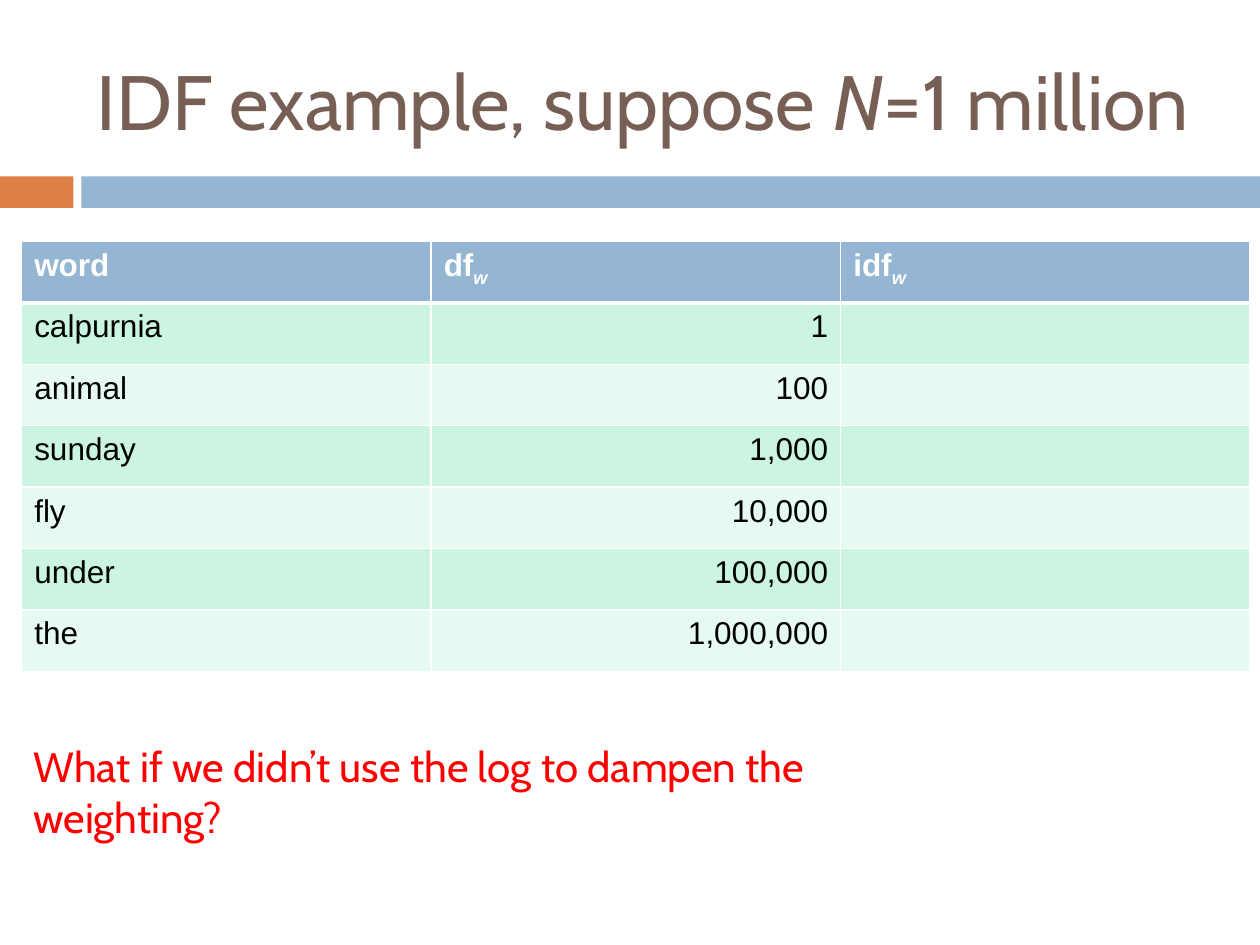
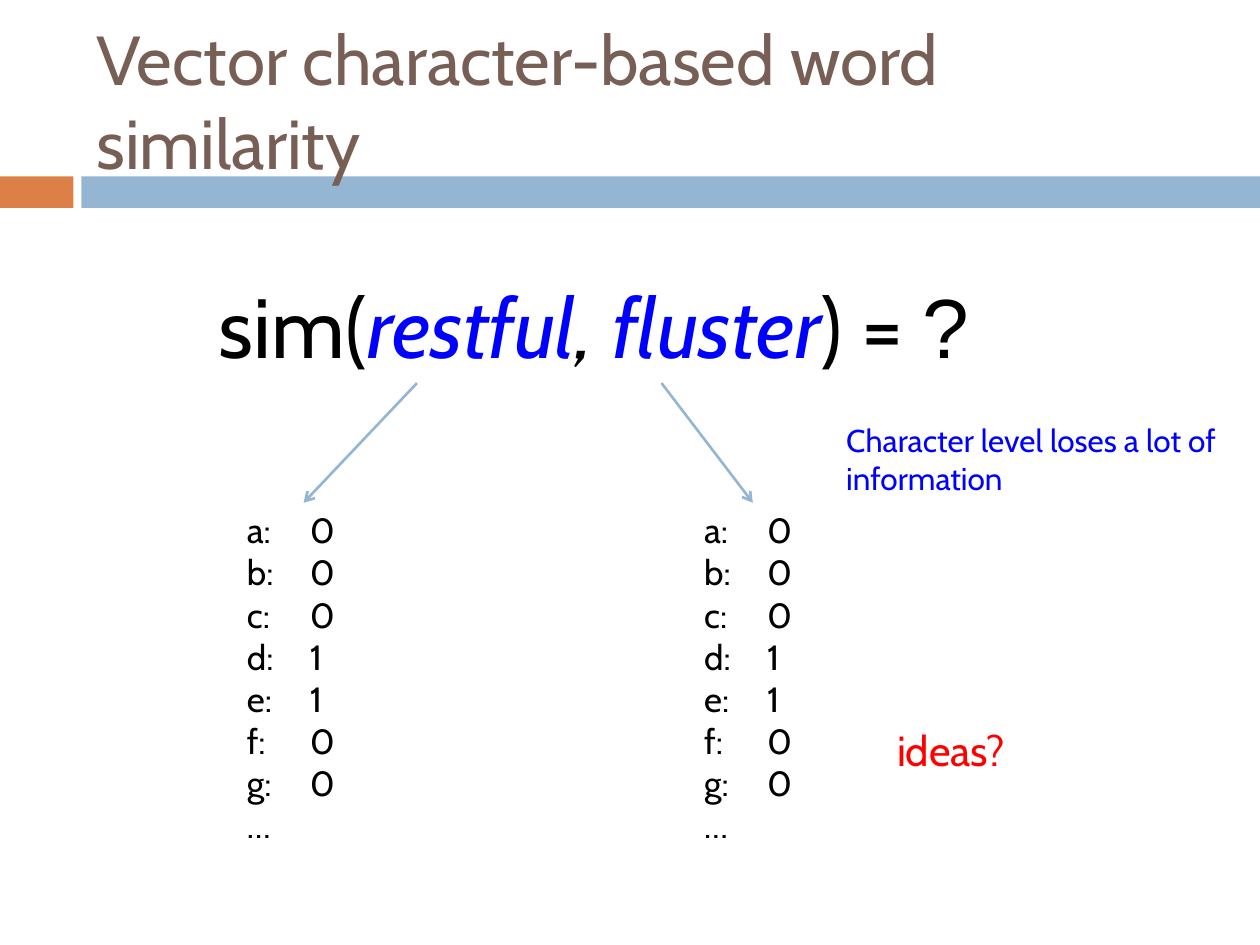
from lxml.etree import SubElement
from pptx import Presentation
from pptx.dml.color import RGBColor
from pptx.enum.shapes import MSO_CONNECTOR, MSO_SHAPE
from pptx.enum.text import MSO_ANCHOR, MSO_AUTO_SIZE, PP_ALIGN
from pptx.oxml.ns import qn
from pptx.util import Pt

BROWN = RGBColor(0x77, 0x5F, 0x55)
ORANGE = RGBColor(0xDD, 0x80, 0x47)
STEEL = RGBColor(0x94, 0xB6, 0xD2)
MINT = RGBColor(0xCB, 0xF5, 0xE1)
PALE_MINT = RGBColor(0xE7, 0xFA, 0xF1)
RED = RGBColor(0xFF, 0x00, 0x00)
BLUE = RGBColor(0x00, 0x00, 0xFF)
BLACK = RGBColor(0x00, 0x00, 0x00)
WHITE = RGBColor(0xFF, 0xFF, 0xFF)


def add_run(paragraph, text, size, color, font="Cabin", bold=False, italic=False):
    run = paragraph.add_run()
    run.text = text
    run.font.name = font
    run.font.size = Pt(size)
    run.font.color.rgb = color
    run.font.bold = bold
    run.font.italic = italic
    return run


def add_text_box(slide, left, top, width, height):
    """Add a wrapping text box and return its text frame."""
    frame = slide.shapes.add_textbox(Pt(left), Pt(top), Pt(width), Pt(height)).text_frame
    frame.word_wrap = True
    return frame


presentation = Presentation()
presentation.slide_width = Pt(720)
presentation.slide_height = Pt(540)
layout = presentation.slide_layouts[5]

# Titles: (text, italic) runs and size
titles = [
    ([("IDF example, suppose ", False), ("N", True), ("=1 million", False)], 44),
    ([("Vector character-based word similarity", False)], 39.6),
]
for title_runs, size in titles:
    slide = presentation.slides.add_slide(layout)
    title = slide.shapes.title
    title.left, title.top, title.width, title.height = Pt(48), Pt(18), Pt(642), Pt(78)
    title.text_frame.auto_size = MSO_AUTO_SIZE.NONE
    title.text_frame.vertical_anchor = MSO_ANCHOR.MIDDLE
    paragraph = title.text_frame.paragraphs[0]
    paragraph.alignment = PP_ALIGN.LEFT
    for text, italic in title_runs:
        add_run(paragraph, text, size, BROWN, italic=italic)
idf_slide, similarity_slide = presentation.slides

# The bands belong to the layout, behind every title
for left, width, color in [(0, 42, ORANGE), (46.5, 673.5, STEEL)]:
    band = idf_slide.shapes.add_shape(MSO_SHAPE.RECTANGLE, Pt(left), Pt(100.8), Pt(width), Pt(18))
    band.shadow.inherit = False
    band.fill.solid()
    band.fill.fore_color.rgb = color
    band.line.fill.background()
    layout.shapes.element.insert(2, band.element)

# Slide 1: document frequency table
frequencies = [
    ("calpurnia", "1"),
    ("animal", "100"),
    ("sunday", "1,000"),
    ("fly", "10,000"),
    ("under", "100,000"),
    ("the", "1,000,000"),
]
row_count = len(frequencies) + 1
row_height = 35.1
table = idf_slide.shapes.add_table(
    row_count, 3, Pt(12.4), Pt(138), Pt(702), Pt(row_count * row_height)
).table
for row in table.rows:
    row.height = Pt(row_height)

for row_index in range(row_count):
    for column_index in range(3):
        cell = table.cell(row_index, column_index)
        properties = cell._tc.get_or_add_tcPr()
        for side in ("L", "R", "T", "B"):
            under_header = (row_index, side) in [(0, "B"), (1, "T")]
            border = SubElement(properties, qn(f"a:ln{side}"), w=str(Pt(3 if under_header else 1)))
            border_fill = SubElement(border, qn("a:solidFill"))
            SubElement(border_fill, qn("a:srgbClr"), val=str(WHITE))
        cell.fill.solid()
        if row_index == 0:
            cell.fill.fore_color.rgb = STEEL
        else:
            cell.fill.fore_color.rgb = MINT if row_index % 2 else PALE_MINT

for column_index, (heading, subscript) in enumerate([("word", ""), ("df", "w"), ("idf", "w")]):
    paragraph = table.cell(0, column_index).text_frame.paragraphs[0]
    add_run(paragraph, heading, 18, WHITE, "Arial", bold=True)
    if subscript:
        run = add_run(paragraph, subscript, 18, WHITE, "Arial", bold=True, italic=True)
        run._r.get_or_add_rPr().set("baseline", "-25000")

for row_index, (word, frequency) in enumerate(frequencies, start=1):
    add_run(table.cell(row_index, 0).text_frame.paragraphs[0], word, 18, BLACK, "Arial")
    paragraph = table.cell(row_index, 1).text_frame.paragraphs[0]
    paragraph.alignment = PP_ALIGN.RIGHT
    add_run(paragraph, frequency, 18, BLACK, "Arial")

# Slide 2: similarity formula
formula = add_text_box(similarity_slide, 118, 153.4, 602, 65.5).paragraphs[0]
for text, color, font, italic in [
    ("sim(", BLACK, "Cabin", False),
    ("restful", BLUE, "Cabin", True),
    (",", BLACK, "Cabin", True),
    (" fluster", BLUE, "Cabin", True),
    (") = ", BLACK, "Cabin", False),
    ("?", BLACK, "Arial", False),
]:
    add_run(formula, text, 48, color, font, italic=italic)

# Both words give the same letter counts
letter_counts = [*(f"{letter}:\t{int(letter in 'de')}" for letter in "abcdefg"), "…"]
for list_left, arrow_start, arrow_end in [(134, 238.3, 173.5), (395.3, 378, 430.2)]:
    frame = add_text_box(similarity_slide, list_left, 287.3, 70, 201)
    for index, text in enumerate(letter_counts):
        paragraph = frame.add_paragraph() if index else frame.paragraphs[0]
        tabs = SubElement(paragraph._p.get_or_add_pPr(), qn("a:tabLst"))
        SubElement(tabs, qn("a:tab"), pos=str(Pt(36)), algn="l")
        add_run(paragraph, text, 20, BLACK)

    arrow = similarity_slide.shapes.add_connector(
        MSO_CONNECTOR.STRAIGHT, Pt(arrow_start), Pt(218.9), Pt(arrow_end), Pt(287.3)
    )
    arrow.line.color.rgb = STEEL
    arrow.line.width = Pt(1.5)
    SubElement(arrow.line._get_or_add_ln(), qn("a:tailEnd"), type="arrow")
    SubElement(arrow._element.spPr, qn("a:effectLst"))

# Remarks on both slides
for slide, text, size, color, box in [
    (idf_slide, "What if we didn’t use the log to dampen the weighting?", 24, RED,
     (12, 419.8, 552, 36)),
    (similarity_slide, "Character level loses a lot of information", 18, BLUE,
     (476.5, 236.9, 243.5, 51)),
    (similarity_slide, "ideas?", 24, RED, (505.5, 410.4, 151, 36)),
]:
    add_run(add_text_box(slide, *box).paragraphs[0], text, size, color)

presentation.save("out.pptx")
